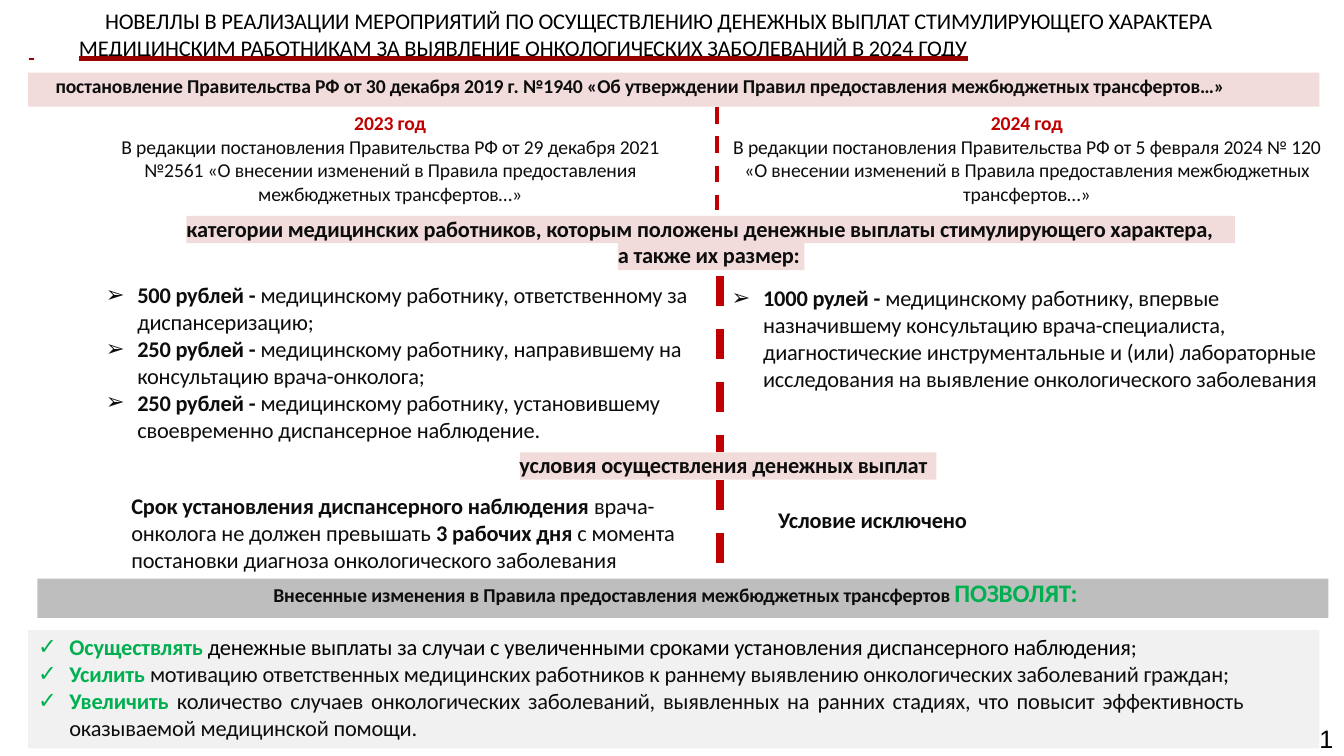
import pptx
import pptx.util
import pptx.dml.color
import pptx.enum.dml
import pptx.enum.shapes
import pptx.enum.text
from lxml import etree
from pptx.oxml.ns import qn

Cm, Pt = pptx.util.Cm, pptx.util.Pt

THEME = {
    "font": "Calibri", "number_font": "Arial", "title_font": "Times New Roman",
    "spacing": "-10", "note": 14, "body": 16, "large": 18,
    "black": "000000", "text": "0D0D0D", "red": "C00000", "green": "00AF50",
    "underline": "990000", "pink": "F1DCDB", "grey": "BEBEBE", "pale": "F1F1F1",
}

# Content: a run is (text, style); a style is a set of words, "bold" or a colour name
PLAIN, BOLD = "text", "text bold"
RED, GREEN = "red bold", "green bold"

TITLE = [
    {"left": 1.96, "runs": [("НОВЕЛЛЫ В РЕАЛИЗАЦИИ МЕРОПРИЯТИЙ ПО ОСУЩЕСТВЛЕНИЮ ДЕНЕЖНЫХ ВЫПЛАТ "
                             "СТИМУЛИРУЮЩЕГО ХАРАКТЕРА", "black")]},
    {"left": 0.03, "tabs": (4.78, 32.56), "runs": [
        (" \t", "black underline serif"),
        ("МЕДИЦИНСКИМ РАБОТНИКАМ ЗА ВЫЯВЛЕНИЕ ОНКОЛОГИЧЕСКИХ ЗАБОЛЕВАНИЙ В 2024 ГОДУ\t",
         "black underline")]},
]
DECREE = [{"left": 0.69, "runs": [("постановление Правительства РФ от 30 декабря 2019 г. №1940 «Об утверждении "
                                   "Правил предоставления межбюджетных трансфертов…»", BOLD)]}]
EDITION_2023 = [
    {"align": "CENTER", "runs": [("2023 год", RED)]},
    {"align": "CENTER", "runs": [("В редакции постановления Правительства РФ от 29 декабря 2021", PLAIN)]},
    {"align": "CENTER", "left": 0.64, "right": 0.64, "runs": [
        ("№2561 «О внесении изменений в Правила предоставления межбюджетных трансфертов…»", PLAIN)]},
]
EDITION_2024 = [
    {"align": "CENTER", "runs": [("2024 год", RED)]},
    {"align": "CENTER", "runs": [("В редакции постановления Правительства РФ от 5 февраля 2024 № 120", PLAIN)]},
    {"align": "CENTER", "left": 0.3, "right": 0.3, "runs": [
        ("«О внесении изменений в Правила предоставления межбюджетных трансфертов…»", PLAIN)]},
]
CATEGORIES = [{"line": 18.6, "runs": [("категории медицинских работников, которым положены денежные выплаты "
                                       "стимулирующего характера,", BOLD)]}]
AMOUNTS = [{"line": 18.2, "runs": [("а также их размер:", BOLD)]}]
PAYMENTS_2023 = [
    {"bullet": "➢", "runs": [("500 рублей - ", BOLD),
                             ("медицинскому работнику, ответственному за диспансеризацию;", PLAIN)]},
    {"bullet": "➢", "runs": [("250 рублей - ", BOLD), ("медицинскому работнику, направившему на", PLAIN)]},
    {"left": 0.84, "runs": [("консультацию врача-онколога;", PLAIN)]},
    {"bullet": "➢", "runs": [("250 рублей - ", BOLD), ("медицинскому работнику, установившему "
                                                       "своевременно диспансерное наблюдение.", PLAIN)]},
]
PAYMENTS_2024 = [
    {"bullet": "➢", "runs": [("1000 рулей - ", BOLD), ("медицинскому работнику, впервые", PLAIN)]},
    {"left": 0.84, "runs": [("назначившему консультацию врача-специалиста,", PLAIN)]},
    {"left": 0.84, "runs": [("диагностические инструментальные и (или) лабораторные", PLAIN)]},
]
PAYMENTS_2024_END = [{"left": 0.03, "runs": [("исследования на выявление онкологического заболевания", PLAIN)]}]
CONDITIONS = [{"left": 0.03, "runs": [("условия осуществления денежных выплат", BOLD)]}]
TERM_2023 = [{"left": 0.03, "runs": [
    ("Срок установления диспансерного наблюдения ", BOLD),
    ("врача-онколога не должен превышать ", PLAIN),
    ("3 рабочих дня ", BOLD),
    ("с момента постановки диагноза онкологического заболевания", PLAIN)]}]
TERM_2024 = [{"left": 0.03, "runs": [("Условие исключено", BOLD)]}]
CHANGES = [{"left": 0.03, "runs": [
    ("Внесенные изменения в Правила предоставления межбюджетных трансфертов ", BOLD),
    ("ПОЗВОЛЯТ:", GREEN + " large")]}]
RESULTS = [
    {"bullet": "✓", "runs": [("Осуществлять ", GREEN), ("денежные выплаты за случаи с увеличенными сроками "
                                                        "установления диспансерного наблюдения;", "black")]},
    {"bullet": "✓", "runs": [("Усилить ", GREEN), ("мотивацию ответственных медицинских работников к раннему "
                                                   "выявлению онкологических заболеваний граждан;", PLAIN)]},
    {"bullet": "✓", "align": "JUSTIFY", "right": 1.65, "runs": [
        ("Увеличить ", GREEN),
        ("количество случаев онкологических заболеваний, выявленных на ранних стадиях, что повысит "
         "эффективность оказываемой медицинской помощи.", PLAIN)]},
]
NUMBER = [{"left": 0.03, "runs": [("1", "black number")]}]

# Parts from back to front: box in cm, fill, text size, inset at the top, paragraphs
PARTS = [
    ((0.94, 14.58, 32.54, 0.99), "grey", None, 0, []),
    ((0.69, 0.15, 32.61, 1.42), None, "body", 0.03, TITLE),
    ((0.71, 1.83, 32.54, 0.86), "pink", "note", 0.03, DECREE),
    ((33.22, 18.19, 0.43, 0.84), None, "large", 0.03, NUMBER),
    ((6.86, 14.53, 20.65, 0.84), None, "note", 0.03, CHANGES),
    ((0.71, 15.88, 32.54, 2.98), "pale", None, 0, []),
    ((0.91, 15.93, 32.11, 2.77), None, "body", 0.03, RESULTS),
    ((2.9, 2.77, 13.87, 2.44), None, "note", 0.03, EDITION_2023),
    ((18.31, 2.77, 15.14, 2.44), None, "note", 0.03, EDITION_2024),
    ((2.62, 7.06, 15.04, 4.14), None, "body", 0.03, PAYMENTS_2023),
    ((4.7, 5.44, 26.42, 0.69), "pink", "body", 0, CATEGORIES),
    ((15.57, 6.12, 4.7, 0.69), "pink", "body", 0, AMOUNTS),
    ((18.39, 7.14, 15.06, 2.11), None, "body", 0.03, PAYMENTS_2024),
    ((19.2, 9.17, 14.33, 0.74), None, "body", 0.03, PAYMENTS_2024_END),
    ((13.11, 11.4, 10.49, 0.69), "pink", None, 0, []),
    ((13.06, 11.35, 10.54, 0.74), None, "body", 0.03, CONDITIONS),
    ((3.28, 12.37, 14.05, 2.11), None, "body", 0.03, TERM_2023),
    ((19.58, 12.73, 4.93, 0.74), None, "body", 0.03, TERM_2024),
]
# Dashed dividers between the years: x, top, bottom, width in points
DIVIDERS = [(18.06, 2.69, 5.28, 3), (18.14, 6.96, 11.4, 5.38), (18.14, 12.09, 14.53, 5.38)]


def color(name):
    return pptx.dml.color.RGBColor.from_string(THEME[name])


def add_run(paragraph, text, style, size):
    words = style.split()
    run = paragraph.add_run()
    run.text = text
    run.font.size = Pt(THEME["large" if "large" in words else size])
    run.font.bold = "bold" in words
    run.font.color.rgb = color(words[0])
    properties = run.font._element
    properties.set("spc", THEME["spacing"])
    if "underline" in words:
        run.font.underline = pptx.enum.text.MSO_UNDERLINE.HEAVY_LINE
        fill = etree.SubElement(etree.SubElement(properties, qn("a:uFill")), qn("a:solidFill"))
        etree.SubElement(fill, qn("a:srgbClr")).set("val", THEME["underline"])
    font_key = {"serif": "title_font", "number": "number_font"}.get(words[-1], "font")
    run.font.name = THEME[font_key]


def fill_paragraph(paragraph, content, size):
    properties = paragraph._p.get_or_add_pPr()
    bullet = content.get("bullet")
    properties.set("marL", str(Cm(0.84 if bullet else content.get("left", 0))))
    properties.set("marR", str(Cm(content.get("right", 0))))
    properties.set("indent", str(Cm(-0.79 if bullet else 0)))
    if bullet:
        etree.SubElement(properties, qn("a:buFont")).set("typeface", THEME["number_font"])
        etree.SubElement(properties, qn("a:buChar")).set("char", bullet)
    if "tabs" in content:
        tab_list = etree.SubElement(properties, qn("a:tabLst"))
        for position in content["tabs"]:
            etree.SubElement(tab_list, qn("a:tab"), pos=str(Cm(position)), algn="l")
    paragraph.alignment = getattr(pptx.enum.text.PP_ALIGN, content.get("align", "LEFT"))
    if "line" in content:
        paragraph.line_spacing = Pt(content["line"])
    for text, style in content["runs"]:
        add_run(paragraph, text, style, size)


def add_part(slide, box, fill, size, top_inset, content):
    lengths = [Cm(value) for value in box]
    if fill:
        shape = slide.shapes.add_shape(pptx.enum.shapes.MSO_SHAPE.RECTANGLE, *lengths)
        shape.shadow.inherit = False
        shape.fill.solid()
        shape.fill.fore_color.rgb = color(fill)
        shape.line.fill.background()
    else:
        shape = slide.shapes.add_textbox(*lengths)
    frame = shape.text_frame
    frame.word_wrap = True
    frame.vertical_anchor = pptx.enum.text.MSO_ANCHOR.TOP
    frame.margin_left = frame.margin_right = frame.margin_bottom = 0
    frame.margin_top = Cm(top_inset)
    for index, item in enumerate(content):
        fill_paragraph(frame.add_paragraph() if index else frame.paragraphs[0], item, size)


def add_divider(slide, x, top, bottom, width):
    line = slide.shapes.add_connector(pptx.enum.shapes.MSO_CONNECTOR.STRAIGHT,
                                      Cm(x), Cm(top), Cm(x), Cm(bottom))
    line.line.color.rgb = color("red")
    line.line.width = Pt(width)
    line.line.dash_style = pptx.enum.dml.MSO_LINE.DASH
    etree.SubElement(line._element.spPr, qn("a:effectLst"))


def main():
    presentation = pptx.Presentation()
    presentation.slide_width, presentation.slide_height = Cm(33.87), Cm(19.05)
    slide = presentation.slides.add_slide(presentation.slide_layouts[6])
    # Dividers lie behind the bands
    for divider in DIVIDERS:
        add_divider(slide, *divider)
    for part in PARTS:
        add_part(slide, *part)
    presentation.save("out.pptx")


if __name__ == "__main__":
    main()
